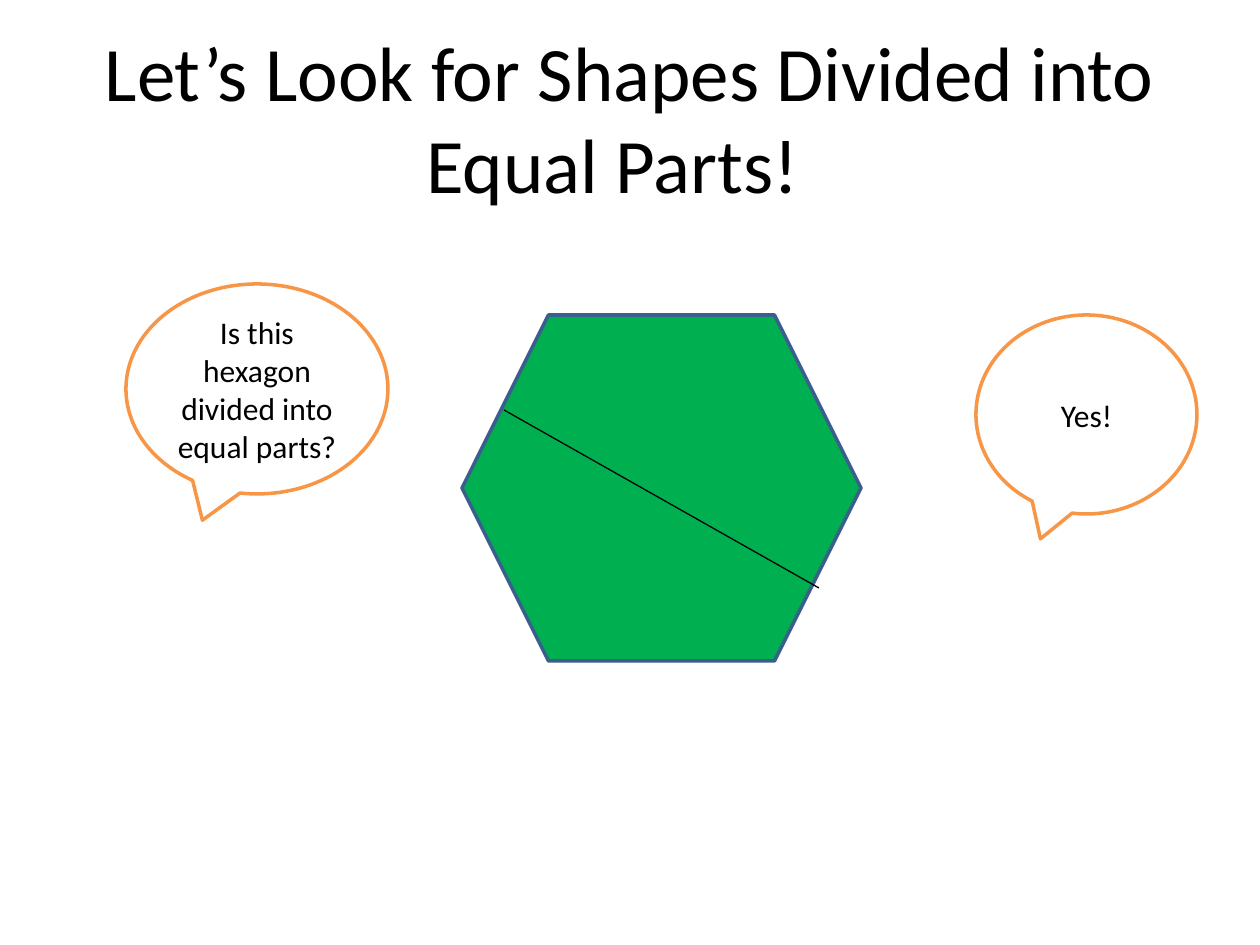
from typing import NamedTuple

from pptx import Presentation
from pptx import util as u
from pptx.dml.color import RGBColor
from pptx.enum import shapes, text
from pptx.oxml.ns import qn
from lxml import etree

EMU_PER_PX = 914400 // 126
FONT = "Calibri"
COLORS = {
    "paper": "FFFFFF",
    "ink": "000000",
    "bubble": "F79646",
    "hexagon": "00B050",
    "edge": "3A5F8C",
}


class Box(NamedTuple):
    left: int
    top: int
    width: int
    height: int


class Bubble(NamedTuple):
    words: str
    box: Box


TITLE_BOX = Box(63, 38, 1134, 158)
HEXAGON_BOX = Box(462, 315, 399, 346)
DIVIDER_ENDS = (504, 410, 819, 588)
BUBBLES = [
    Bubble("Yes!", Box(976, 315, 221, 199)),
    Bubble("Is this hexagon divided into equal parts?", Box(126, 284, 262, 210)),
]


def px(length: int) -> u.Emu:
    return u.Emu(length * EMU_PER_PX)


def color(name: str) -> RGBColor:
    return RGBColor.from_string(COLORS[name])


def write(shape, words: str, *, size: int, ink: str = "ink") -> None:
    frame = shape.text_frame
    frame.word_wrap = True
    frame.vertical_anchor = text.MSO_ANCHOR.MIDDLE
    paragraph = frame.paragraphs[0]
    paragraph.alignment = text.PP_ALIGN.CENTER
    run = paragraph.add_run()
    run.text = words
    run.font.size = u.Pt(size)
    run.font.name = FONT
    run.font.color.rgb = color(ink)


def draw_shape(slide, kind: shapes.MSO_SHAPE, box: Box, fill: str, line: str):
    shape = slide.shapes.add_shape(kind, *map(px, box))
    shape.shadow.inherit = False
    shape.fill.solid()
    shape.fill.fore_color.rgb = color(fill)
    shape.line.color.rgb = color(line)
    shape.line.width = u.Pt(2)
    return shape


def draw_bubble(slide, bubble: Bubble) -> None:
    callout = draw_shape(
        slide, shapes.MSO_SHAPE.OVAL_CALLOUT, bubble.box, "paper", "bubble"
    )
    write(callout, bubble.words, size=18)


def draw_divider(slide, ends: tuple[int, int, int, int]) -> None:
    divider = slide.shapes.add_connector(
        shapes.MSO_CONNECTOR.STRAIGHT, *map(px, ends)
    )
    divider.line.color.rgb = color("ink")
    divider.line.width = u.Pt(0.75)
    etree.SubElement(divider._element.spPr, qn("a:effectLst"))


def main() -> None:
    deck = Presentation()
    deck.slide_width, deck.slide_height = px(1260), px(945)
    slide = deck.slides.add_slide(deck.slide_layouts[5])

    # Title
    title = slide.shapes.title
    title.left, title.top, title.width, title.height = map(px, TITLE_BOX)
    write(title, "Let’s Look for Shapes Divided into Equal Parts!  ", size=44)

    # Question and answer
    for bubble in BUBBLES:
        draw_bubble(slide, bubble)

    # Hexagon cut in two
    draw_shape(slide, shapes.MSO_SHAPE.HEXAGON, HEXAGON_BOX, "hexagon", "edge")
    draw_divider(slide, DIVIDER_ENDS)

    deck.save("out.pptx")


if __name__ == "__main__":
    main()
